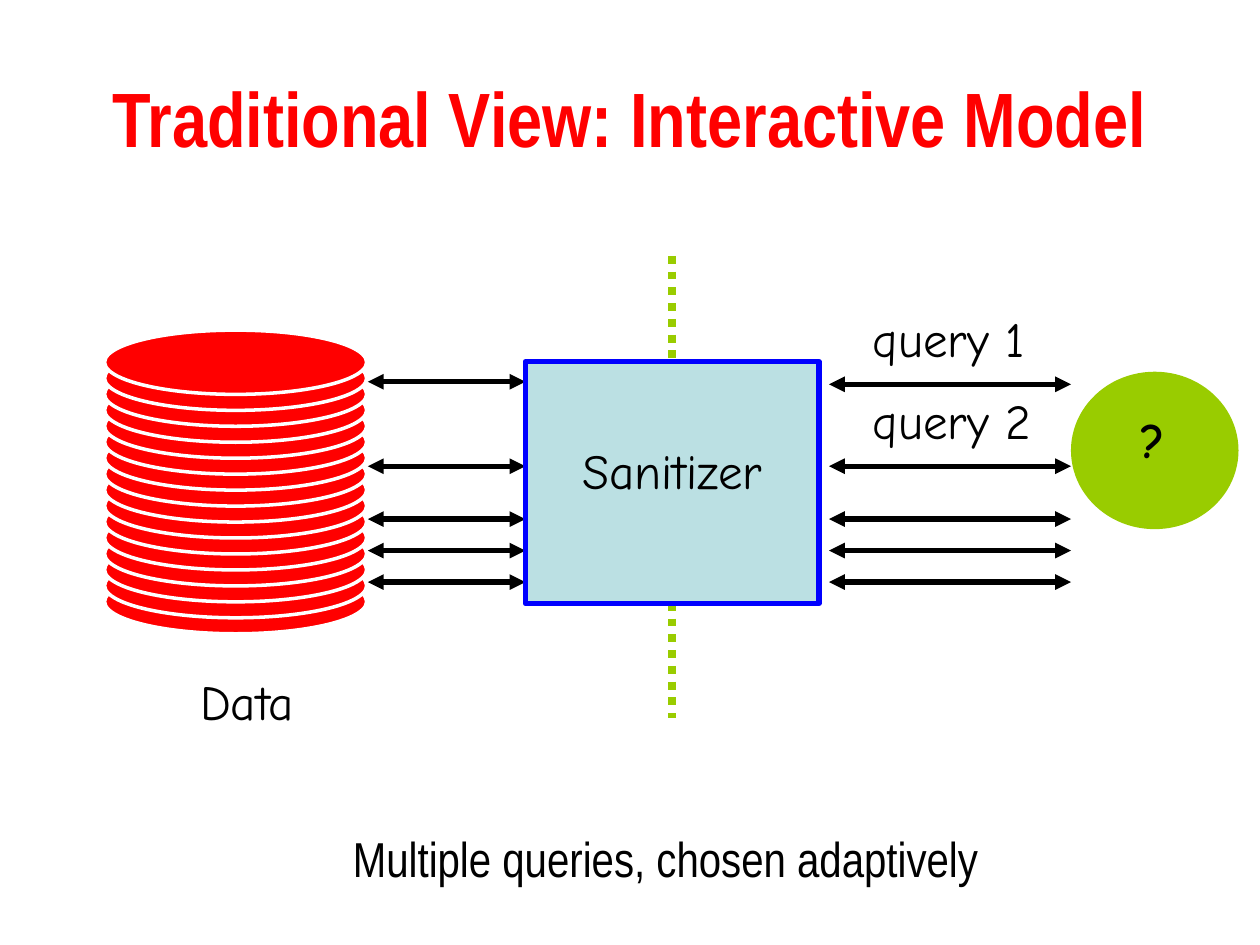
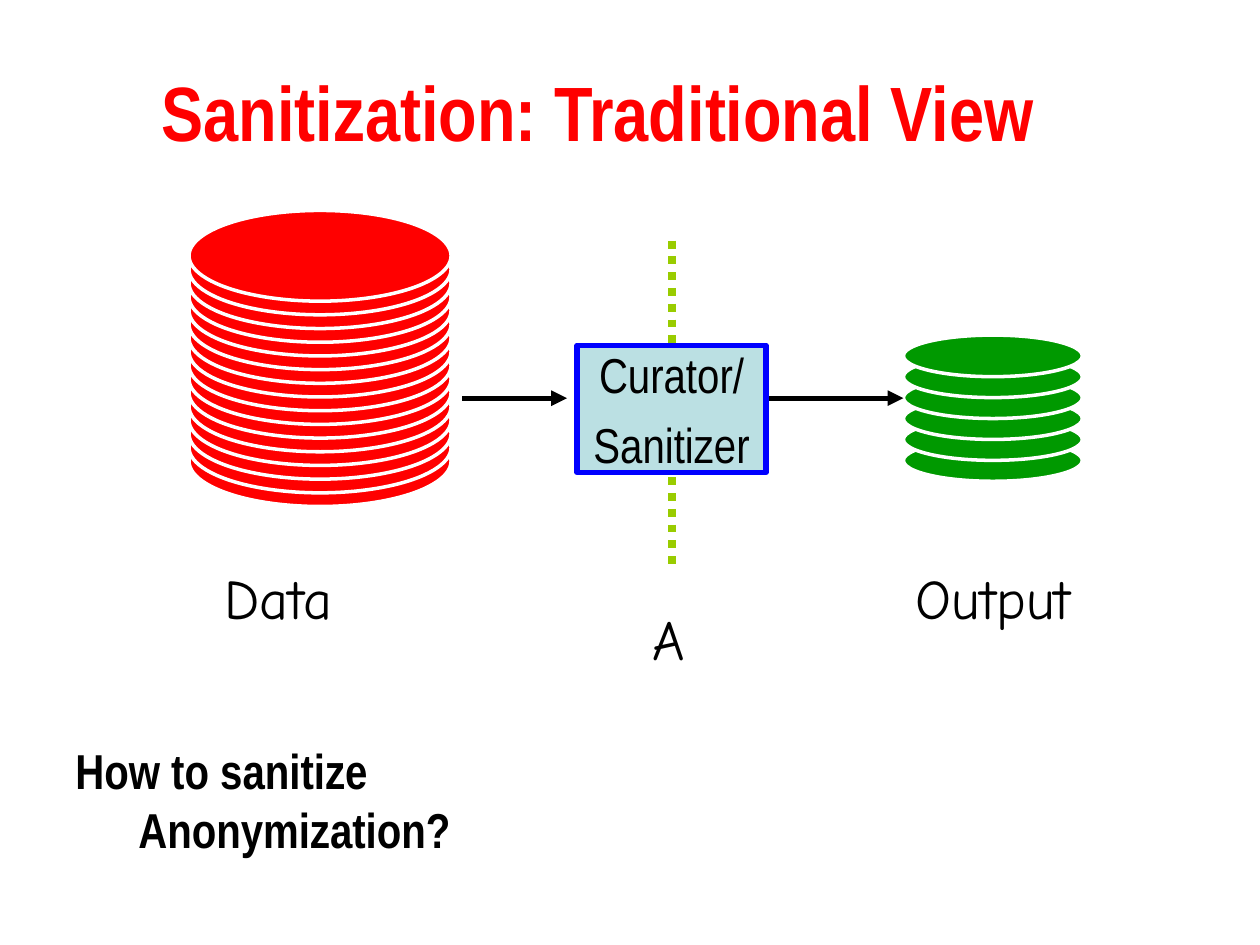
"""Builds two slides on data sanitization: the interactive model and the traditional view."""
from dataclasses import dataclass

from lxml.etree import SubElement
from pptx import Presentation
from pptx.dml.color import RGBColor
from pptx.enum.dml import MSO_LINE
from pptx.enum.shapes import MSO_CONNECTOR, MSO_SHAPE
from pptx.enum.text import MSO_ANCHOR, PP_ALIGN
from pptx.oxml.ns import qn
from pptx.util import Inches, Pt


@dataclass(frozen=True)
class Theme:
    """Colours, fonts and sizes in use on both slides."""
    red: str = "FF0000"
    lime: str = "99CC00"
    green: str = "009900"
    pale: str = "BBE0E3"
    blue: str = "0000FF"
    black: str = "000000"
    white: str = "FFFFFF"
    sans: str = "Arial Narrow"
    hand: str = "Comic Neue"
    head: int = 44
    big: int = 32
    text: int = 28
    rim: float = 2
    edge: float = 3
    dots: float = 4.5


T = Theme()
MID, LEFT = PP_ALIGN.CENTER, PP_ALIGN.LEFT

MODEL = {
    "title": ("Traditional View: Interactive Model", (0.5, 0.3, 9, 1.25)),
    "wall": (2.03, 5.7),
    "stacks": [((0.83, 2.62, 2.08, 0.51), 4.52, 16, T.red)],
    "arrows": [(2.92, 4.17, y, True) for y in (3.03, 3.7, 4.12, 4.37, 4.62)]
    + [(6.58, 8.5, y, True) for y in (3.05, 3.7, 4.12, 4.37, 4.62)],
    "box": (4.17, 2.87, 2.33, 1.92),
    "notes": [
        (["Data"], (0.67, 5.28, 2.58, 0.63), T.hand, T.text, MID, False),
        (["Sanitizer"], (4.17, 3.45, 2.33, 0.63), T.hand, T.text, MID, False),
        (["query 1"], (6.83, 2.4, 1.58, 0.57), T.hand, T.text, LEFT, False),
        (["query 2"], (6.83, 3.05, 1.58, 0.57), T.hand, T.text, LEFT, False),
        (["Multiple queries, chosen adaptively"], (2.63, 6.53, 5.3, 0.57),
         T.sans, T.text, MID, False),
    ],
}

VIEW = {
    "title": ("Sanitization: Traditional View", (0.25, 0.25, 9, 1.25)),
    "wall": (1.91, 4.49),
    "stacks": [((1.5, 1.67, 2.08, 0.72), 3.3, 16, T.red),
               ((7.17, 2.66, 1.42, 0.33), 3.49, 6, T.green)],
    "arrows": [(3.67, 4.5, 3.16, False), (6.08, 7.17, 3.16, False)],
    "box": (4.58, 2.74, 1.5, 1.01),
    "notes": [
        (["Data"], (0.92, 4.42, 2.58, 0.63), T.hand, T.big, MID, False),
        (["A"], (5.08, 4.75, 0.75, 0.64), T.hand, T.big, LEFT, False),
        (["Output"], (7.17, 4.42, 2.25, 0.64), T.hand, T.big, LEFT, False),
        (["How to sanitize", "Anonymization?"], (0.5, 5.83, 8.83, 1.04),
         T.sans, T.text, LEFT, True),
    ],
}
ROLE = ["Curator/", "Sanitizer"]
USER = (8.5, 2.95, 1.33, 1.25)
MARK = (8.92, 3.2, 0.45, 0.63)


def rgb(color):
    return RGBColor.from_string(color)


def spot(at):
    return [Inches(v) for v in at]


def style(par, font, size, color=T.black, align=MID, bold=False):
    par.alignment = align
    par.font.name, par.font.size, par.font.bold = font, Pt(size), bold
    par.font.color.rgb = rgb(color)


def write(frame, lines, font, size, align, bold):
    frame.word_wrap = True
    frame.text = "\n".join(lines)
    for par in frame.paragraphs:
        style(par, font, size, align=align, bold=bold)


def shape(home, kind, at, fill, rim=None, width=0):
    item = home.add_shape(kind, *spot(at))
    item.shadow.inherit = False
    item.fill.solid()
    item.fill.fore_color.rgb = rgb(fill)
    if rim:
        item.line.color.rgb = rgb(rim)
        item.line.width = Pt(width)
    else:
        item.line.fill.background()
    return item


def rule(slide, start, end, color, width, ends=(), dash=None):
    item = slide.shapes.add_connector(
        MSO_CONNECTOR.STRAIGHT, *spot(start), *spot(end))
    item.line.color.rgb = rgb(color)
    item.line.width = Pt(width)
    if dash:
        item.line.dash_style = dash
    props = item.element.spPr
    for tag in ends:
        SubElement(props.find(qn("a:ln")), qn(tag), type="triangle")
    SubElement(props, qn("a:effectLst"))


def stack(slide, top, last, count, fill):
    x, y, w, h = top
    step = (last - y) / (count - 1)
    group = slide.shapes.add_group_shape()
    for i in reversed(range(count)):
        shape(group.shapes, MSO_SHAPE.OVAL, (x, y + i * step, w, h),
              fill, T.white, T.rim)


def build(deck, data):
    slide = deck.slides.add_slide(deck.slide_layouts[5])
    text, at = data["title"]
    title = slide.shapes.title
    title.left, title.top, title.width, title.height = spot(at)
    title.text_frame.text = text
    title.text_frame.vertical_anchor = MSO_ANCHOR.MIDDLE
    style(title.text_frame.paragraphs[0], T.sans, T.head, T.red, bold=True)

    top, low = data["wall"]
    rule(slide, (5.33, top), (5.33, low), T.lime, T.dots,
         dash=MSO_LINE.ROUND_DOT)
    for item in data["stacks"]:
        stack(slide, *item)
    for x, far, y, both in data["arrows"]:
        ends = ("a:headEnd", "a:tailEnd") if both else ("a:tailEnd",)
        rule(slide, (x, y), (far, y), T.black, T.edge, ends)
    box = shape(slide.shapes, MSO_SHAPE.RECTANGLE, data["box"],
                T.pale, T.blue, T.edge)
    for lines, at, *look in data["notes"]:
        note = slide.shapes.add_textbox(*spot(at))
        write(note.text_frame, lines, *look)
        for par in note.text_frame.paragraphs[1:]:
            par.level = 1
    return slide, box


def main():
    deck = Presentation()
    deck.slide_width, deck.slide_height = Inches(10), Inches(7.5)

    slide, _ = build(deck, MODEL)
    user = slide.shapes.add_group_shape().shapes
    shape(user, MSO_SHAPE.OVAL, USER, T.lime)
    mark = shape(user, MSO_SHAPE.RECTANGLE, MARK, T.lime)
    mark.text_frame.vertical_anchor = MSO_ANCHOR.TOP
    write(mark.text_frame, ["?"], T.hand, T.text, MID, True)

    _, box = build(deck, VIEW)
    box.text_frame.vertical_anchor = MSO_ANCHOR.MIDDLE
    write(box.text_frame, ROLE, T.sans, T.text, MID, False)
    for par in box.text_frame.paragraphs:
        par.space_before = Pt(6)

    deck.save("out.pptx")


if __name__ == "__main__":
    main()
